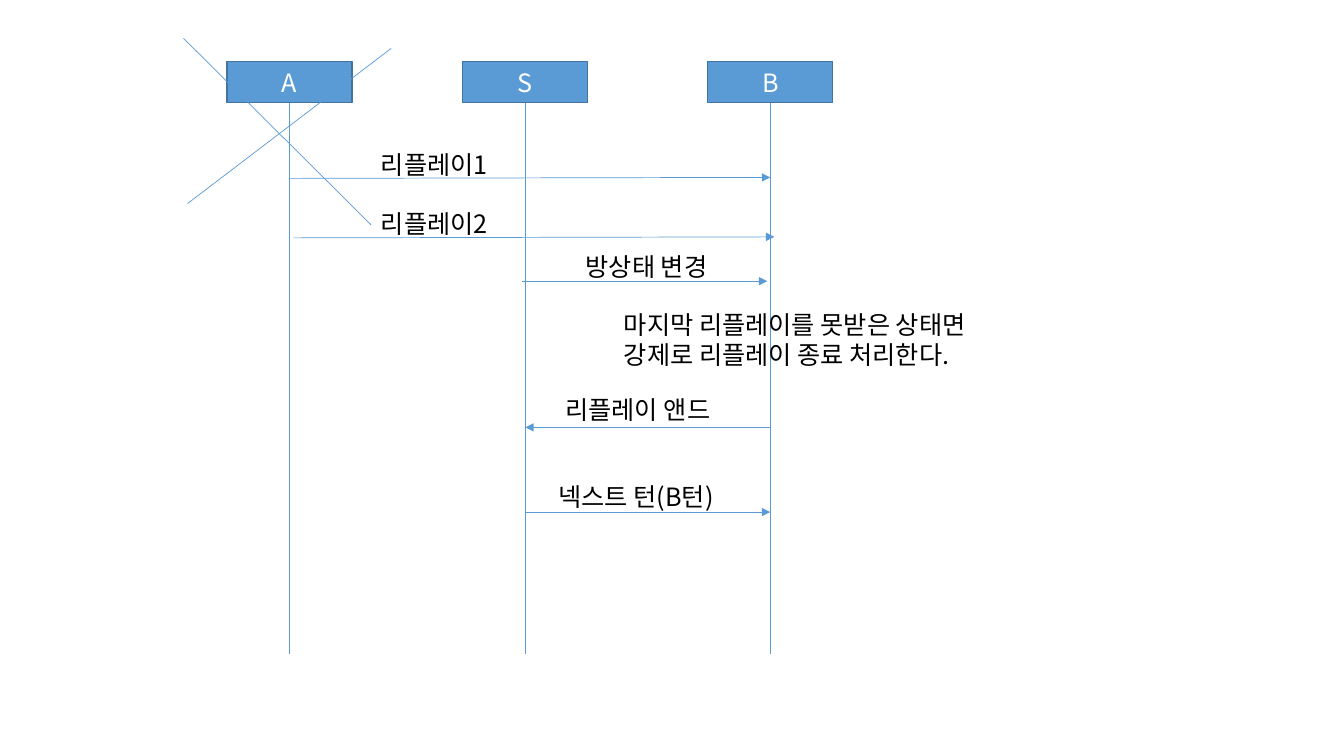
from lxml import etree
from pptx import Presentation, util as u
from pptx.dml.color import RGBColor
from pptx.enum import shapes, text
from pptx.oxml.ns import qn

PX = u.Inches(1) // 100
BLUE = RGBColor(0x5B, 0x9B, 0xD5)
DARK_BLUE = RGBColor(0x43, 0x73, 0x9E)
WHITE = RGBColor(0xFF, 0xFF, 0xFF)
BLACK = RGBColor(0, 0, 0)
FONT = "Noto Sans CJK KR"

HEAD_WIDTH, HEAD_HEIGHT, LIFELINE_END = 124, 41, 588
PARTICIPANTS = {"A": 0, "S": 234, "B": 477}

# sender, receiver, y, sideways shift, rise, label, label box
MESSAGES = [
    ("A", "B", 116, 0, 1, "리플레이1", (143, 82, 135, 40), False),
    ("A", "B", 175, 4, 1, "리플레이2", (143, 141, 135, 40), False),
    ("S", "B", 218, -3, 0, "방상태 변경", (346, 183, 155, 40), False),
    ("B", "S", 363, 0, 0, "리플레이 앤드", (326, 325, 197, 40), True),
    ("S", "B", 447, 0, 0, "넥스트 턴(B턴)", (319, 412, 197, 40), True),
]
NOTE = "마지막 리플레이를 못받은 상태면\n강제로 리플레이 종료 처리한다."
NOTE_BOX = (384, 241, 400, 71)
CROSS = [(163, -13, -39, 141), (-43, -23, 143, 162)]


def add_text(paragraph, content, color):
    for index, line in enumerate(content.split("\n")):
        if index:
            paragraph.add_line_break()
        run = paragraph.add_run()
        run.text = line
        run.font.size = u.Pt(18)
        run.font.name = FONT
        run.font.color.rgb = color
        etree.SubElement(run.font._element, qn("a:ea"), typeface=FONT)


def add_line(slide, x1, y1, x2, y2, arrow=False):
    line = slide.shapes.add_connector(
        shapes.MSO_CONNECTOR.STRAIGHT, x1 * PX, y1 * PX, x2 * PX, y2 * PX)
    line.line.color.rgb = BLUE
    line.line.width = u.Pt(0.5)
    if arrow:
        etree.SubElement(line.line._get_or_add_ln(), qn("a:tailEnd"), type="triangle")
    etree.SubElement(line._element.spPr, qn("a:effectLst"))
    return line


def add_label(slide, left, top, width, height, content, wrap=False):
    label = slide.shapes.add_textbox(left * PX, top * PX, width * PX, height * PX)
    label.text_frame.word_wrap = wrap
    label.text_frame.auto_size = text.MSO_AUTO_SIZE.SHAPE_TO_FIT_TEXT
    add_text(label.text_frame.paragraphs[0], content, BLACK)


def add_participant(slide, left, top, name):
    head = slide.shapes.add_shape(
        shapes.MSO_SHAPE.RECTANGLE, left * PX, top * PX, HEAD_WIDTH * PX, HEAD_HEIGHT * PX)
    head.shadow.inherit = False
    head.fill.solid()
    head.fill.fore_color.rgb = BLUE
    head.line.color.rgb = DARK_BLUE
    head.line.width = u.Pt(1)
    head.text_frame.vertical_anchor = text.MSO_ANCHOR.MIDDLE
    paragraph = head.text_frame.paragraphs[0]
    paragraph.alignment = text.PP_ALIGN.CENTER
    add_text(paragraph, name, WHITE)

    # Lifeline from the middle of the lower side
    axis = left + HEAD_WIDTH // 2
    lifeline = add_line(slide, axis, top + HEAD_HEIGHT, axis, top + LIFELINE_END)
    lifeline.begin_connect(head, 2)
    return axis


def add_sequence_diagram(slide, left, top):
    # Participants
    axes = {name: add_participant(slide, left + offset, top, name)
            for name, offset in PARTICIPANTS.items()}

    # Messages with their labels
    for sender, receiver, y, shift, rise, content, box, wrap in MESSAGES:
        add_line(slide, axes[sender] + shift, top + y,
                 axes[receiver] + shift, top + y - rise, arrow=True)
        x, label_y, width, height = box
        add_label(slide, left + x, top + label_y, width, height, content, wrap)

    # Cross over participant A
    for x1, y1, x2, y2 in CROSS:
        add_line(slide, left + x1, top + y1, left + x2, top + y2)

    # Note beside the lifeline of B
    x, y, width, height = NOTE_BOX
    add_label(slide, left + x, top + y, width, height, NOTE)


def main():
    presentation = Presentation()
    presentation.slide_width = 1333 * PX
    presentation.slide_height = 750 * PX
    slide = presentation.slides.add_slide(presentation.slide_layouts[6])
    add_sequence_diagram(slide, 225, 61)
    presentation.save("out.pptx")


if __name__ == "__main__":
    main()
